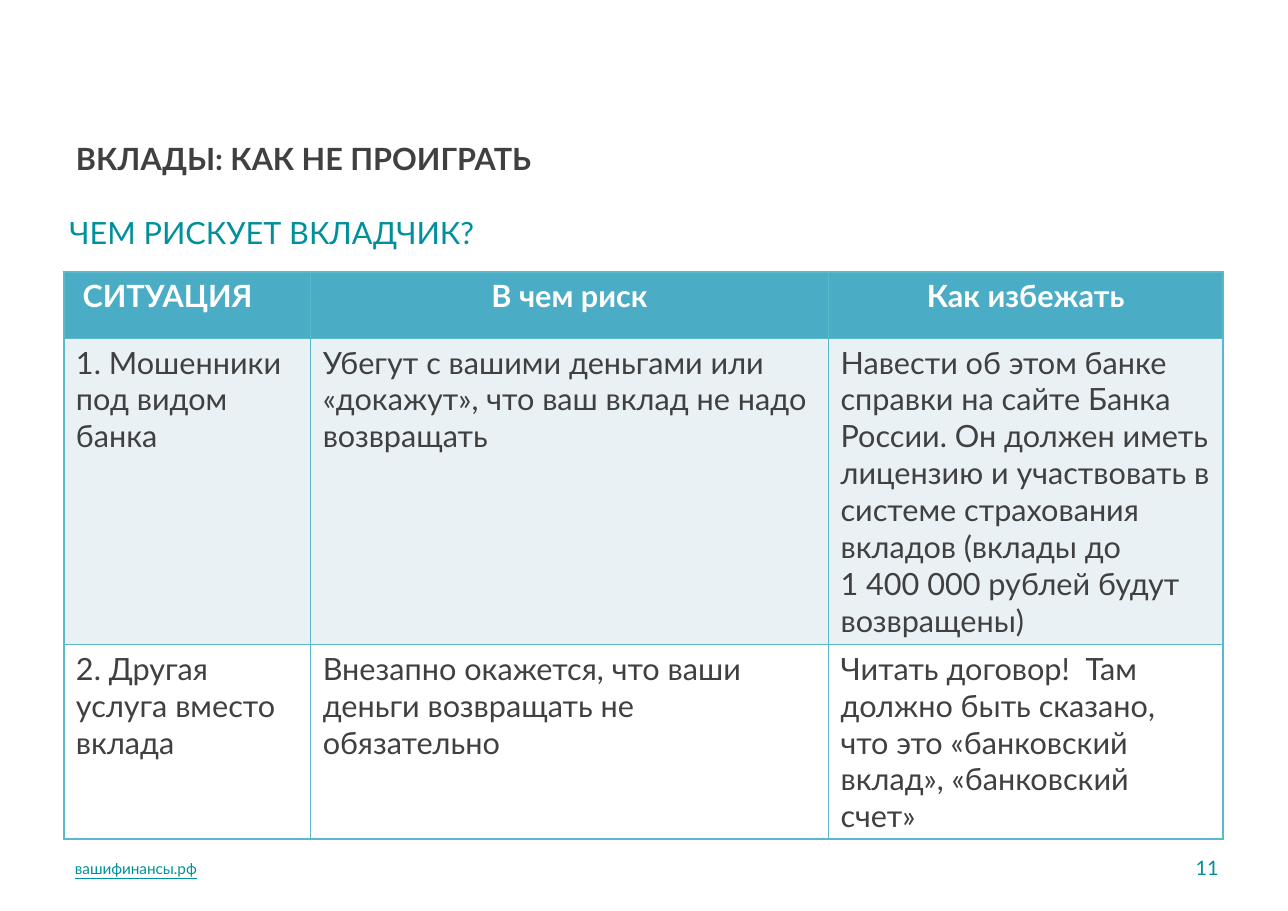
from lxml.etree import SubElement
from pptx import Presentation
from pptx.dml.color import RGBColor
from pptx.enum.text import MSO_ANCHOR, PP_ALIGN
from pptx.oxml.ns import qn
from pptx.util import Inches, Pt

TEAL = RGBColor(0x00, 0x90, 0x9B)
DARK = RGBColor(0x40, 0x40, 0x40)
WHITE = RGBColor(0xFF, 0xFF, 0xFF)
HEADER_FILL = RGBColor(0x4B, 0xAC, 0xC6)
PALE_FILL = RGBColor(0xE9, 0xF1, 0xF5)
BORDER = RGBColor(0x5A, 0xB8, 0xCB)

MARGINS = {"margin_left": Inches(0.11), "margin_right": Inches(0.11),
           "margin_top": Inches(0.05), "margin_bottom": Inches(0.05)}
HEADING = {"size": Pt(20), "bold": True}
BODY = {"size": Pt(20), "bold": False}

COLUMN_WIDTHS = (2.24, 4.7, 3.58)
ROW_HEIGHTS = (0.6, 2.78, 1.6)
ROW_FILLS = (HEADER_FILL, PALE_FILL, WHITE)
RISKS = (
    ("СИТУАЦИЯ", "В чем риск", "Как избежать"),
    ("1. Мошенники под видом банка",
     "Убегут с вашими деньгами или «докажут», что ваш вклад не надо возвращать",
     "Навести об этом банке справки на сайте Банка России. Он должен иметь "
     "лицензию и участвовать в системе страхования вкладов (вклады до\n"
     "1 400 000 рублей будут возвращены)"),
    ("2. Другая услуга вместо вклада",
     "Внезапно окажется, что ваши деньги возвращать не обязательно",
     "Читать договор!  Там должно быть сказано, что это «банковский вклад», "
     "«банковский счет»"),
)


def apply_format(target, values):
    for name, value in values.items():
        setattr(target, name, value)


def write_text(frame, text, color, font, align=PP_ALIGN.LEFT):
    frame.text = text
    for paragraph in frame.paragraphs:
        paragraph.alignment = align
        for run in paragraph.runs:
            apply_format(run.font, {"name": "Lato", **font})
            run.font.color.rgb = color


def add_label(slide, box, text, color, font, align=PP_ALIGN.LEFT,
              anchor=MSO_ANCHOR.TOP):
    label = slide.shapes.add_textbox(*(Inches(length) for length in box))
    apply_format(label.text_frame,
                 {"word_wrap": True, "vertical_anchor": anchor, **MARGINS})
    write_text(label.text_frame, text, color, font, align)


def add_borders(cell):
    properties = cell._tc.get_or_add_tcPr()
    for edge in ("a:lnL", "a:lnR", "a:lnT", "a:lnB"):
        line = SubElement(properties, qn(edge), w=str(Pt(1)))
        fill = SubElement(line, qn("a:solidFill"))
        SubElement(fill, qn("a:srgbClr"), val=str(BORDER))


def add_risk_table(slide, box):
    table = slide.shapes.add_table(len(RISKS), len(COLUMN_WIDTHS),
                                   *(Inches(length) for length in box)).table
    for column, width in zip(table.columns, COLUMN_WIDTHS):
        column.width = Inches(width)
    for row, height in zip(table.rows, ROW_HEIGHTS):
        row.height = Inches(height)
    for row_index, (texts, fill) in enumerate(zip(RISKS, ROW_FILLS)):
        is_header = row_index == 0
        for column_index, text in enumerate(texts):
            cell = table.cell(row_index, column_index)
            apply_format(cell, MARGINS)
            add_borders(cell)
            cell.fill.solid()
            cell.fill.fore_color.rgb = fill
            centred = is_header and column_index > 0
            write_text(cell.text_frame, text, WHITE if is_header else DARK,
                       HEADING if is_header else BODY,
                       PP_ALIGN.CENTER if centred else PP_ALIGN.LEFT)
    # The first heading is set in slightly from its column
    table.cell(0, 0).margin_left = Inches(0.17)


def add_footer(slide, box):
    left, top, width, height = box
    number_width = 0.87
    add_label(slide, (left, top, 3.97, height), "вашифинансы.рф", TEAL,
              {"size": Pt(10), "underline": True}, anchor=MSO_ANCHOR.MIDDLE)
    add_label(slide, (left + width - number_width, top, number_width, height),
              "11", TEAL, {"size": Pt(13)}, PP_ALIGN.RIGHT, MSO_ANCHOR.MIDDLE)


def main():
    presentation = Presentation()
    presentation.slide_width = Inches(11.69)
    presentation.slide_height = Inches(8.27)
    slide = presentation.slides.add_slide(presentation.slide_layouts[6])

    # Title and question
    add_label(slide, (0.58, 1.22, 10.52, 0.96), "ВКЛАДЫ: КАК НЕ ПРОИГРАТЬ",
              DARK, HEADING)
    add_label(slide, (0.52, 1.89, 10.59, 0.58), "ЧЕМ РИСКУЕТ ВКЛАДЧИК?",
              TEAL, BODY)

    # Risks and how to avoid them
    add_risk_table(slide, (0.58, 2.47, sum(COLUMN_WIDTHS), sum(ROW_HEIGHTS)))

    # Site address and page number
    add_footer(slide, (0.57, 7.66, 10.6, 0.44))

    presentation.save("out.pptx")


if __name__ == "__main__":
    main()
